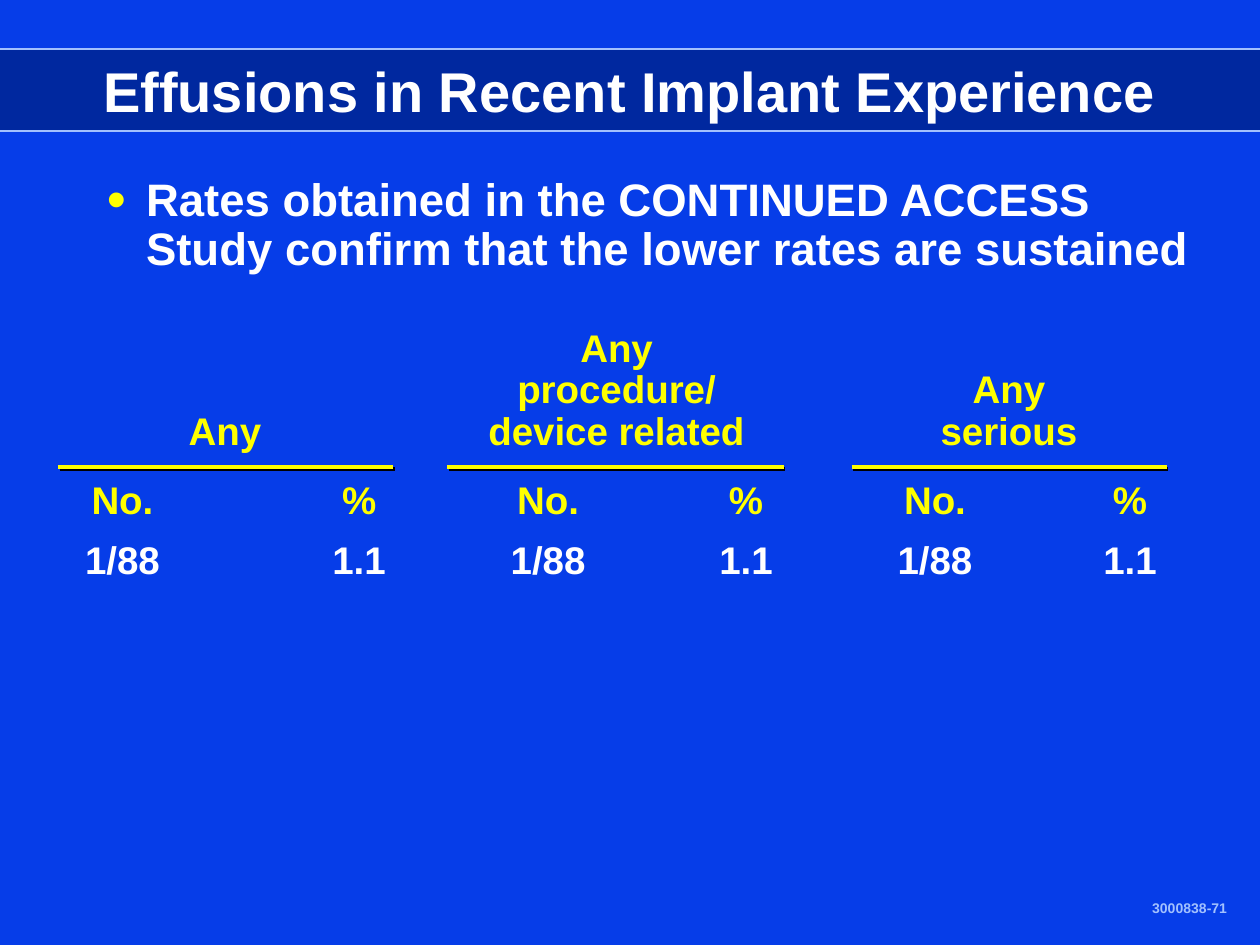
from pptx import Presentation
from pptx.dml.color import RGBColor
from pptx.enum.shapes import MSO_CONNECTOR
from pptx.enum.text import MSO_ANCHOR, MSO_AUTO_SIZE, PP_ALIGN
from pptx.oxml import parse_xml
from pptx.oxml.ns import nsdecls
from pptx.util import Cm, Pt

LEFT, MID, RIGHT = PP_ALIGN.LEFT, PP_ALIGN.CENTER, PP_ALIGN.RIGHT
TOP, CENTER, BOTTOM = MSO_ANCHOR.TOP, MSO_ANCHOR.MIDDLE, MSO_ANCHOR.BOTTOM
FIXED = MSO_AUTO_SIZE.NONE
STRAIGHT = MSO_CONNECTOR.STRAIGHT

HUES = {
    "back": "063DE8",
    "band": "00289F",
    "pale": "A2C1FE",
    "gold": "FFFF00",
    "white": "FFFFFF",
    "black": "000000",
}


def color(name):
    return RGBColor.from_string(HUES[name])


def node(tag, attrs="", inner=""):
    return parse_xml(f"<a:{tag} {nsdecls('a')} {attrs}>{inner}</a:{tag}>")


def solid(name):
    return f'<a:srgbClr val="{HUES[name]}"/>'


class Deck:
    face = "Arial"

    def __init__(self, slide):
        self.slide = slide
        fill = slide.background.fill
        fill.solid()
        fill.fore_color.rgb = color("back")

    def place(self, shape, box):
        shape.left, shape.top, shape.width, shape.height = map(Cm, box)

    def style(self, para, size, hue, align=LEFT, lead=1.0, gap=0):
        para.alignment = align
        para.line_spacing = lead
        para.space_before = Pt(gap)
        for run in para.runs:
            font = run.font
            font.name, font.size, font.bold = self.face, Pt(size), True
            font.color.rgb = color(hue)

    def frame(self, shape, text, anchor=TOP, wrap=True):
        frame = shape.text_frame
        frame.text = text
        frame.word_wrap = wrap
        frame.auto_size = FIXED
        frame.vertical_anchor = anchor
        return frame.paragraphs

    def title(self, text, box):
        shape = self.slide.shapes.title
        self.place(shape, box)
        shape.fill.solid()
        shape.fill.fore_color.rgb = color("band")
        shape.line.color.rgb = color("pale")
        shape.line.width = Pt(1.5)
        para = self.frame(shape, text, CENTER)[0]
        self.style(para, 32, "white", MID)

    def bullet(self, text, box):
        shape = self.slide.placeholders[1]
        self.place(shape, box)
        para = self.frame(shape, text)[0]
        props = para._p.get_or_add_pPr()
        props.set("marL", str(Cm(0.79)))
        props.set("indent", str(-Cm(0.79)))
        props.append(node("buClr", inner=solid("gold")))
        props.append(node("buSzPct", 'val="120000"'))
        props.append(node("buFont", f'typeface="{self.face}"'))
        props.append(node("buChar", 'char="•"'))
        self.style(para, 26, "white", lead=0.9)

    def label(self, text, box, size, hue, align, anchor=TOP, wrap=True, lead=1.0):
        shape = self.slide.shapes.add_textbox(*map(Cm, box))
        para = self.frame(shape, text, anchor, wrap)[0]
        self.style(para, size, hue, align, lead)

    def rows(self, lines, hues, stops, box):
        shape = self.slide.shapes.add_textbox(*map(Cm, box))
        text = "\n".join("".join("\t" + cell for cell in line) for line in lines)
        tabs = "".join(f'<a:tab pos="{Cm(stop)}" algn="ctr"/>' for stop in stops)
        for i, para in enumerate(self.frame(shape, text)):
            para._p.get_or_add_pPr().append(node("tabLst", inner=tabs))
            self.style(para, 22, hues[i], lead=0.9, gap=10.4 if i else 0)

    def rule(self, start, end, y):
        line = self.slide.shapes.add_connector(
            STRAIGHT, Cm(start), Cm(y), Cm(end), Cm(y))
        line.line.color.rgb = color("gold")
        line.line.width = Pt(2.25)
        shade = (f'<a:outerShdw blurRad="0" dist="{Pt(1.4)}" dir="2700000">'
                 f'{solid("black")}</a:outerShdw>')
        line._element.spPr.append(node("effectLst", inner=shade))


def main():
    show = Presentation()
    show.slide_width, show.slide_height = Cm(25.4), Cm(19.05)
    deck = Deck(show.slides.add_slide(show.slide_layouts[1]))

    # Title band and lead point
    deck.title("Effusions in Recent Implant Experience", (-0.46, 0.99, 26.31, 1.65))
    deck.bullet("Rates obtained in the CONTINUED ACCESS Study confirm that "
                "the lower rates are sustained", (1.9, 3.45, 23.04, 2.24))

    # Rate columns: subheads and values on centred tabs
    stops = (1.25, 6.02, 9.83, 13.82, 17.63, 21.56)
    deck.rows([["No.", "%"] * 3, ["1/88", "1.1"] * 3], ["gold", "white"],
              stops, (0.97, 9.58, 23.83, 2.36))

    # Group heads, resting on one base line, with their rules
    base = 9.27
    groups = [
        ("Any", 2.16, 4.75, 1.09, 1.17, 7.92),
        ("Any procedure/ device related", 9.47, 5.92, 2.77, 9.02, 15.8),
        ("Any serious", 18.69, 3.3, 1.93, 17.17, 23.52),
    ]
    for text, left, width, height, start, end in groups:
        deck.label(text, (left, base - height, width, height), 22, "gold",
                   MID, BOTTOM, lead=0.9)
        deck.rule(start, end, 9.42)

    # Slide number code
    deck.label("3000838-71", (22.96, 18.01, 2.03, 0.58), 8, "pale", RIGHT, wrap=False)

    show.save("out.pptx")


if __name__ == "__main__":
    main()
